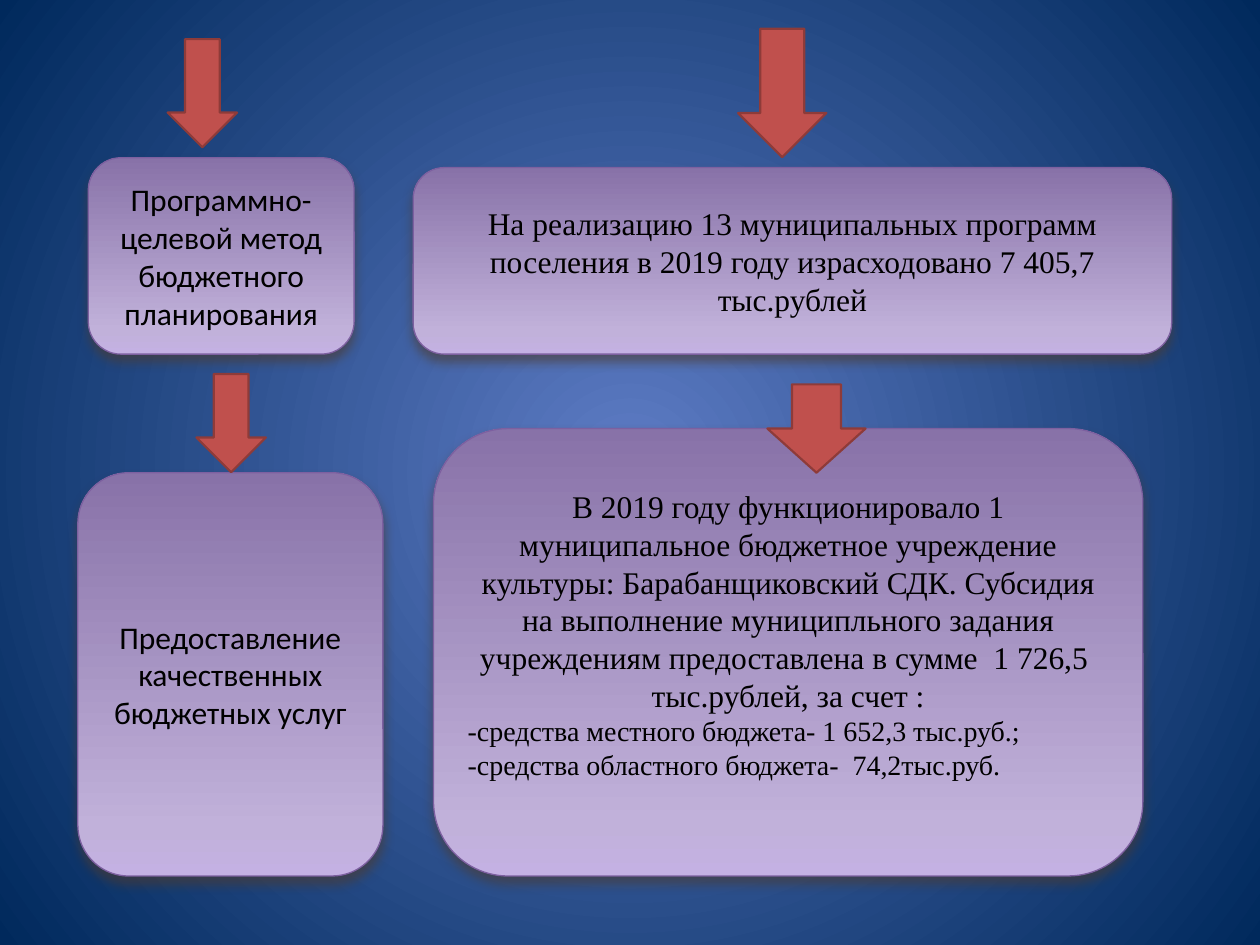
import pptx
import pptx.util
import pptx.oxml
import pptx.oxml.ns
from pptx.dml.color import RGBColor
from pptx.enum.shapes import MSO_SHAPE
from pptx.enum.text import MSO_ANCHOR, PP_ALIGN
from pptx.util import Cm

BLACK = RGBColor(0x00, 0x00, 0x00)
ARROW_FILL = RGBColor(0xC0, 0x50, 0x4D)
ARROW_LINE = RGBColor(0x8E, 0x3B, 0x39)
BOX_LINE = RGBColor(0x7D, 0x60, 0xA0)
SHADOW = RGBColor(0x4E, 0x3B, 0x30)
BOX_STOPS = [
    (0, RGBColor(0xC4, 0xB1, 0xE3)),
    (12, RGBColor(0xC1, 0xB1, 0xDA)),
    (100, RGBColor(0x88, 0x72, 0xA8)),
]
BACKGROUND_STOPS = [
    (0, RGBColor(0x5E, 0x7C, 0xC5)),
    (100, RGBColor(0x00, 0x29, 0x5C)),
]
UPWARD = '<a:lin ang="16200000" scaled="0"/>'
RADIAL = ('<a:path path="circle"><a:fillToRect l="50000" t="50000" '
          'r="50000" b="50000"/></a:path>')
NAMESPACE = pptx.oxml.ns.nsdecls("a")

# Per column: origin, arrow and box places relative to it (cm), font,
# and the lines of each box with their sizes
COLUMNS = [
    {
        "origin": (1.57, 0.79),
        "font": "Calibri",
        "arrows": [(1.81, 0, 1.4, 2.18), (2.39, 6.75, 1.4, 1.98)],
        "boxes": [
            ((0.21, 2.39, 5.36, 3.96),
             ["Программно-целевой метод бюджетного планирования"]),
            ((0, 8.74, 6.15, 8.13),
             ["Предоставление качественных бюджетных услуг"]),
        ],
    },
    {
        "origin": (8.33, 0.58),
        "font": "Times New Roman",
        "arrows": [(6.55, 0, 1.78, 2.59), (7.14, 7.17, 1.98, 1.78)],
        "boxes": [
            ((0, 2.8, 15.29, 3.76),
             ["На реализацию 13 муниципальных программ поселения "
              "в 2019 году израсходовано 7 405,7 тыс.рублей"]),
            ((0.41, 8.06, 14.3, 9.02),
             ["В 2019 году функционировало 1 муниципальное бюджетное "
              "учреждение культуры: Барабанщиковский СДК. Субсидия на "
              "выполнение муниципльного задания учреждениям "
              "предоставлена в сумме  1 726,5  тыс.рублей, за счет :",
              "-средства местного бюджета- 1 652,3 тыс.руб.;",
              "-средства областного бюджета-  74,2тыс.руб."]),
        ],
    },
]


def set_gradient(fill, element, stops, direction):
    """Give the fill of an element its colour stops and direction."""
    fill.gradient()
    gradient = element.find(".//" + pptx.oxml.ns.qn("a:gradFill"))
    stop_list = "".join(
        f'<a:gs pos="{position * 1000}"><a:srgbClr val="{color}"/></a:gs>'
        for position, color in stops)
    gradient.getparent().replace(gradient, pptx.oxml.parse_xml(
        f'<a:gradFill {NAMESPACE} rotWithShape="1">'
        f'<a:gsLst>{stop_list}</a:gsLst>{direction}</a:gradFill>'))


def add_part(slide, kind, origin, place, line_color, line_width):
    left, top, width, height = place
    shape = slide.shapes.add_shape(
        kind, Cm(origin[0] + left), Cm(origin[1] + top), Cm(width), Cm(height))
    shape.shadow.inherit = False
    shape.line.color.rgb = line_color
    shape.line.width = pptx.util.Pt(line_width)
    return shape


def add_box(slide, origin, place, lines, font_name):
    shape = add_part(slide, MSO_SHAPE.ROUNDED_RECTANGLE, origin, place,
                     BOX_LINE, 0.75)
    set_gradient(shape.fill, shape.element, BOX_STOPS, UPWARD)
    # Soft shadow below the box
    effects = shape.element.find(".//" + pptx.oxml.ns.qn("a:effectLst"))
    effects.append(pptx.oxml.parse_xml(
        f'<a:outerShdw {NAMESPACE} blurRad="{pptx.util.Pt(6)}" '
        f'dist="{pptx.util.Pt(4)}" dir="5400000" rotWithShape="0">'
        f'<a:srgbClr val="{SHADOW}"><a:alpha val="60000"/></a:srgbClr>'
        '</a:outerShdw>'))
    # Centred statement, then smaller left-aligned items
    text_frame = shape.text_frame
    text_frame.word_wrap = True
    text_frame.vertical_anchor = MSO_ANCHOR.MIDDLE
    text_frame.text = "\n".join(lines)
    for index, paragraph in enumerate(text_frame.paragraphs):
        paragraph.alignment = PP_ALIGN.LEFT if index else PP_ALIGN.CENTER
        for run in paragraph.runs:
            run.font.name = font_name
            run.font.size = pptx.util.Pt(16 if index else 18)
            run.font.color.rgb = BLACK
    if len(lines) > 1:
        text_frame.margin_bottom = Cm(0.86)


def add_column(slide, column):
    """Place two boxes and the arrows leading to them."""
    origin = column["origin"]
    for place, lines in column["boxes"]:
        add_box(slide, origin, place, lines, column["font"])
    for place in column["arrows"]:
        arrow = add_part(slide, MSO_SHAPE.DOWN_ARROW, origin, place,
                         ARROW_LINE, 1.25)
        arrow.fill.solid()
        arrow.fill.fore_color.rgb = ARROW_FILL


def main():
    presentation = pptx.Presentation()
    presentation.slide_width = Cm(25.4)
    presentation.slide_height = Cm(19.05)
    slide = presentation.slides.add_slide(presentation.slide_layouts[6])
    set_gradient(slide.background.fill, slide.element, BACKGROUND_STOPS, RADIAL)
    for column in COLUMNS:
        add_column(slide, column)
    presentation.save("out.pptx")


if __name__ == "__main__":
    main()
